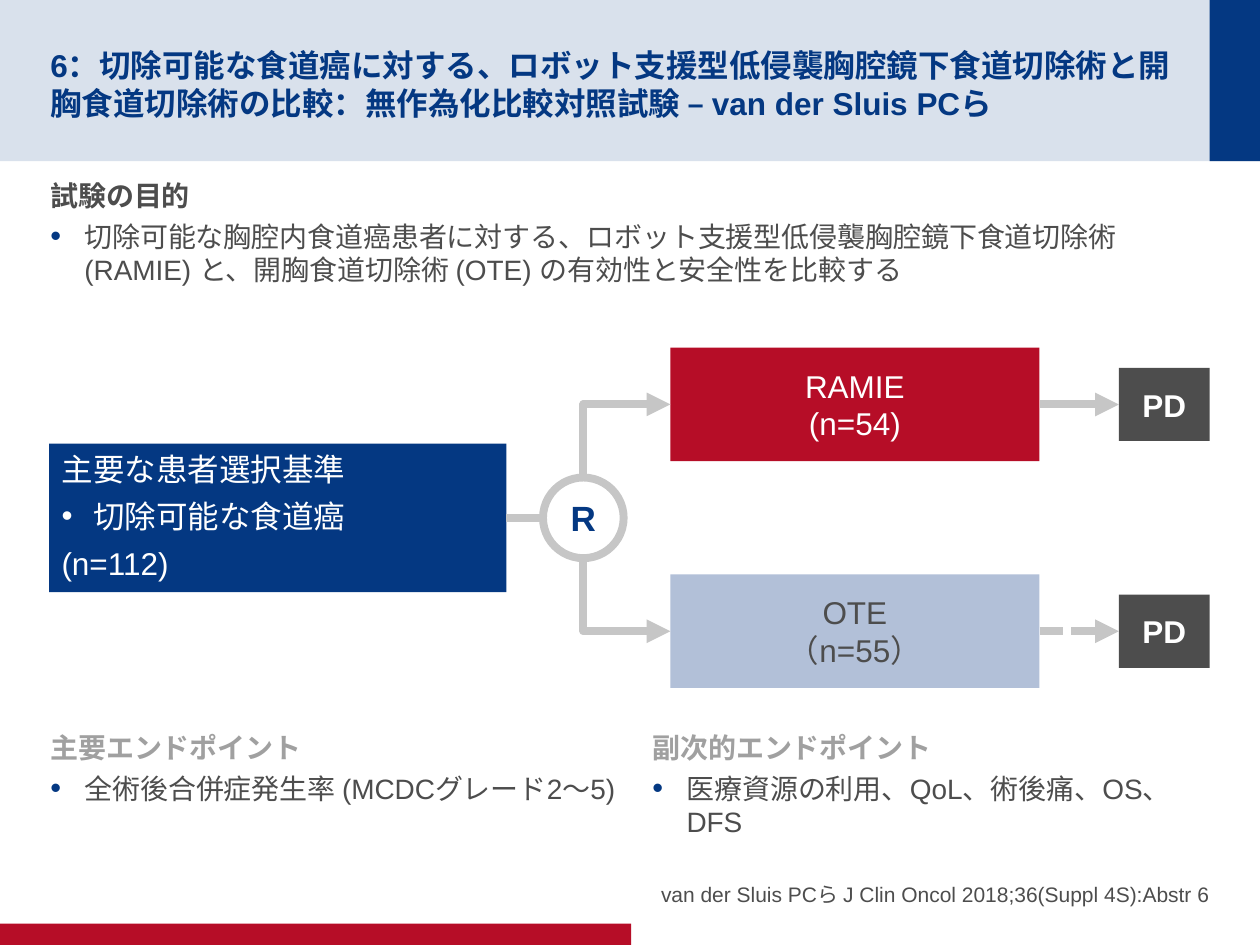
from lxml import etree
from pptx import Presentation
from pptx.dml.color import RGBColor
from pptx.enum.dml import MSO_LINE
from pptx.enum.shapes import MSO_CONNECTOR as Link, MSO_SHAPE as Shape
from pptx.enum.text import MSO_ANCHOR as Anchor, PP_ALIGN as Align
from pptx.oxml.ns import qn
from pptx.util import Inches, Pt

COLORS = {"navy": "043882", "red": "B60D27", "pale": "B2C0D8", "dark": "4D4D4D",
          "gray": "A0A0A0", "line": "C6C6C6", "white": "FFFFFF"}
FONT = "Arial"

TITLE = ("6：切除可能な食道癌に対する、ロボット支援型低侵襲胸腔鏡下食道切除術と"
         "開胸食道切除術の比較：無作為化比較対照試験 – van der Sluis PCら")
CITATION = "van der Sluis PCら J Clin Oncol 2018;36(Suppl 4S):Abstr 6"
SECTIONS = [
    ("試験の目的", "dark",
     "切除可能な胸腔内食道癌患者に対する、ロボット支援型低侵襲胸腔鏡下食道切除術 (RAMIE) と、"
     "開胸食道切除術 (OTE) の有効性と安全性を比較する", (0.4, 1.37, 9.2, 1.0), 0),
    ("主要エンドポイント", "gray", "全術後合併症発生率 (MCDCグレード2～5)",
     (0.4, 5.75, 4.52, 0.76), 0),
    ("副次的エンドポイント", "gray", "医療資源の利用、QoL、術後痛、OS、DFS",
     (5.08, 5.75, 4.52, 0.76), 0.1),
]
CRITERIA = [("主要な患者選択基準", 0, None), ("切除可能な食道癌", 0.25, "•"), ("(n=112)", 0, None)]
ARMS = [("RAMIE", "(n=54)", "red", "white", -1, None),
        ("OTE", "（n=55）", "pale", "dark", 1, MSO_LINE.SQUARE_DOT)]
BANDS = [((0, 0, 10, 1.28), "navy", 15), ((9.6, 0, 0.4, 1.28), "navy", 100),
         ((0, 7.33, 5.01, 0.17), "red", 100)]

CENTER_X, CENTER_Y, RADIUS = 4.63, 4.11, 0.32
ARM_OFFSET = 0.9
ARM_LEFT, ARM_WIDTH, ARM_HEIGHT = 5.32, 2.93, 0.9
PD_LEFT, PD_WIDTH, PD_HEIGHT = 8.88, 0.72, 0.58

prs = Presentation()
prs.slide_width, prs.slide_height = Inches(10), Inches(7.5)
slide = prs.slides.add_slide(prs.slide_layouts[6])


def rgb(name):
    return RGBColor.from_string(COLORS[name])


def add_block(kind, box, fill=None):
    block = slide.shapes.add_shape(kind, *map(Inches, box))
    block.shadow.inherit = False
    if fill:
        block.fill.solid()
        block.fill.fore_color.rgb = rgb(fill)
    else:
        block.fill.background()
    block.line.fill.background()
    return block


def set_frame(shape, insets, anchor=Anchor.TOP, wrap=True):
    frame = shape.text_frame
    frame.word_wrap = wrap
    frame.vertical_anchor = anchor
    (frame.margin_left, frame.margin_top,
     frame.margin_right, frame.margin_bottom) = map(Inches, insets)
    return frame


def add_text_box(box, insets, anchor=Anchor.TOP):
    return set_frame(slide.shapes.add_textbox(*map(Inches, box)), insets, anchor)


def write(frame, text, size, color, bold=False, align=Align.LEFT, after=0, first=True):
    paragraph = frame.paragraphs[0] if first else frame.add_paragraph()
    paragraph.alignment = align
    paragraph.space_after = Pt(after)
    run = paragraph.add_run()
    run.text = text
    run.font.name, run.font.size, run.font.bold = FONT, Pt(size), bold
    run.font.color.rgb = rgb(color)
    return paragraph


def add_bullet(paragraph, indent, color, percent):
    props = paragraph._p.get_or_add_pPr()
    props.set("marL", str(Inches(indent)))
    props.set("indent", str(-Inches(indent)))
    tint = etree.SubElement(props, qn("a:buClr"))
    etree.SubElement(tint, qn("a:srgbClr"), val=COLORS[color])
    etree.SubElement(props, qn("a:buSzPct"), val=str(percent * 1000))
    etree.SubElement(props, qn("a:buFont"), typeface=FONT)
    etree.SubElement(props, qn("a:buChar"), char="•")


def add_link(kind, start, end, dash=None, arrow=True):
    link = slide.shapes.add_connector(kind, *map(Inches, start + end))
    link.line.color.rgb = rgb("line")
    link.line.width = Pt(4.5)
    if dash:
        link.line.dash_style = dash
    if arrow:
        etree.SubElement(link.line._get_or_add_ln(), qn("a:tailEnd"), type="triangle")
    etree.SubElement(link._element.spPr, qn("a:effectLst"))
    return link


def add_corner(arm, side, y):
    start_y = CENTER_Y + side * RADIUS
    run, rise = ARM_LEFT - CENTER_X, abs(y - start_y)
    corner = add_link(Link.ELBOW, (CENTER_X, start_y), (ARM_LEFT, y))
    corner.end_connect(arm, 1)
    corner.left = Inches(CENTER_X + run / 2 - rise / 2)
    corner.top = Inches((start_y + y) / 2 - run / 2)
    corner.width, corner.height = Inches(rise), Inches(run)
    props = corner._element.spPr
    geometry = props.find(qn("a:prstGeom"))
    geometry.set("prst", "bentConnector2")
    xfrm = props.find(qn("a:xfrm"))
    xfrm.set("rot", str((90 if side < 0 else 270) * 60000))
    xfrm.set("flipH", "1")
    xfrm.set("flipV", "1" if side < 0 else "0")


for box, color, opacity in BANDS:
    band = add_block(Shape.RECTANGLE, box, color)
    if opacity < 100:
        tint = band._element.spPr.find(qn("a:solidFill"))[0]
        etree.SubElement(tint, qn("a:alpha"), val=str(opacity * 1000))

write(add_text_box((0.4, 0.2, 9.01, 0.88), (0, 0.05, 0, 0), Anchor.MIDDLE),
      TITLE, 18, "navy", bold=True)
write(add_text_box((4.92, 6.67, 4.68, 0.53), (0, 0, 0, 0), Anchor.BOTTOM),
      CITATION, 12, "dark", align=Align.RIGHT, after=4)

for heading, color, detail, box, inset in SECTIONS:
    section = add_text_box(box, (inset, 0.05, inset, 0.05))
    write(section, heading, 16, color, bold=True, after=4)
    add_bullet(write(section, detail, 16, "dark", after=4, first=False), 0.27, "navy", 110)

criteria = add_block(Shape.ROUNDED_RECTANGLE, (0.39, CENTER_Y - 0.59, 3.63, 1.18), "navy")
criteria.adjustments[0] = 0
criteria_text = set_frame(criteria, (0.1, 0.05, 0.1, 0.05))
for row, (text, indent, bullet) in enumerate(CRITERIA):
    line = write(criteria_text, text, 18, "white", after=5.4, first=row == 0)
    if bullet:
        add_bullet(line, indent, "white", 100)

randomise = add_block(Shape.OVAL, (CENTER_X - RADIUS, CENTER_Y - RADIUS, 2 * RADIUS, 2 * RADIUS))
randomise.line.color.rgb = rgb("line")
randomise.line.width = Pt(4.5)
write(set_frame(randomise, (0.1, 0.05, 0.1, 0.05), Anchor.MIDDLE, wrap=False),
      "R", 20, "navy", bold=True, align=Align.CENTER)
entry = add_link(Link.STRAIGHT, (4.02, CENTER_Y), (CENTER_X - RADIUS, CENTER_Y), arrow=False)
entry.begin_connect(criteria, 3)

for name, count, fill, color, side, dash in ARMS:
    y = CENTER_Y + side * ARM_OFFSET
    arm = add_block(Shape.RECTANGLE, (ARM_LEFT, y - ARM_HEIGHT / 2, ARM_WIDTH, ARM_HEIGHT), fill)
    arm_text = set_frame(arm, (0.1, 0, 0.1, 0), Anchor.MIDDLE)
    write(arm_text, name, 18, color, align=Align.CENTER)
    write(arm_text, count, 18, color, align=Align.CENTER, first=False)
    progression = add_block(Shape.RECTANGLE, (PD_LEFT, y - PD_HEIGHT / 2, PD_WIDTH, PD_HEIGHT), "dark")
    write(set_frame(progression, (0.1, 0, 0.1, 0), Anchor.MIDDLE),
          "PD", 18, "white", bold=True, align=Align.CENTER)
    add_corner(arm, side, y)
    follow_up = add_link(Link.STRAIGHT, (ARM_LEFT + ARM_WIDTH, y), (PD_LEFT, y), dash)
    follow_up.begin_connect(arm, 3)
    follow_up.end_connect(progression, 1)

prs.save("out.pptx")
